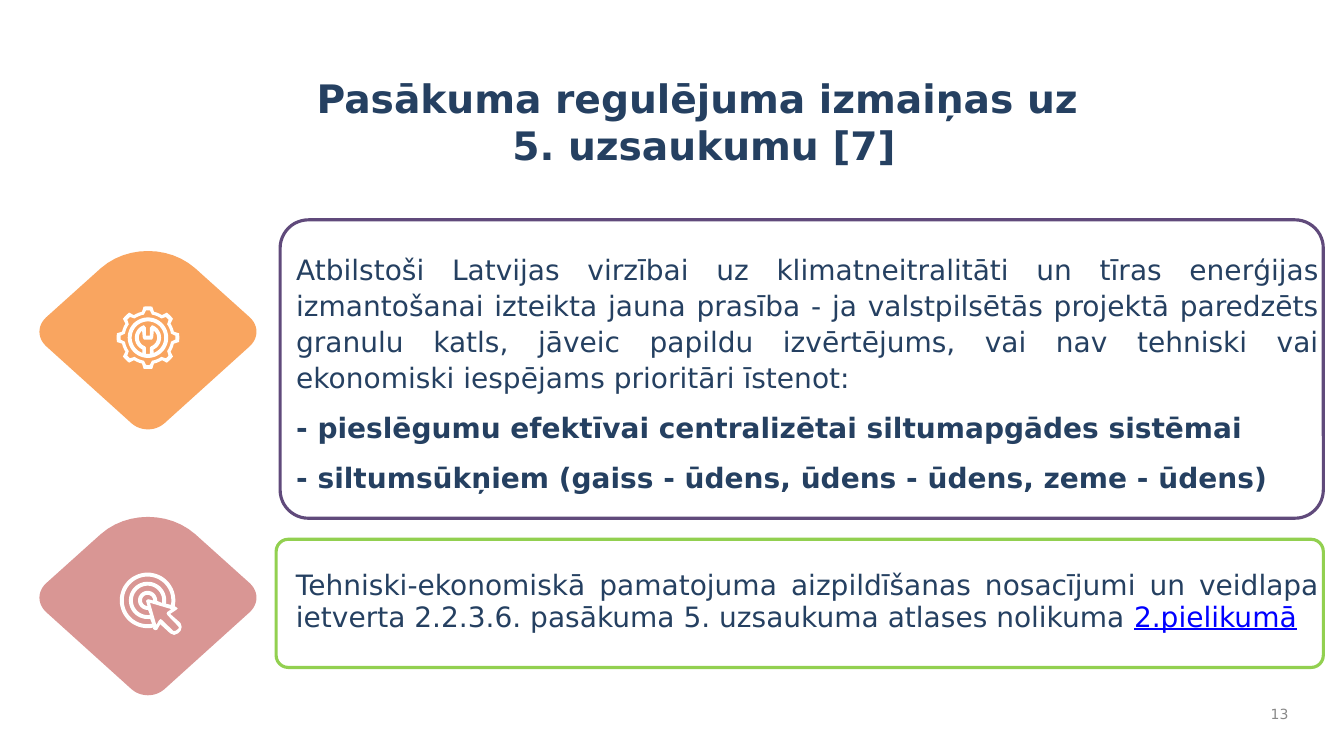
from math import cos, radians, sin

from lxml.etree import SubElement
from pptx import Presentation
from pptx.dml.color import RGBColor
from pptx.enum.shapes import MSO_SHAPE
from pptx.enum.text import MSO_ANCHOR, MSO_AUTO_SIZE, PP_ALIGN
from pptx.oxml.ns import qn
from pptx.util import Cm, Pt

COLORS = {
    "navy": "254061", "grey": "898989", "link": "0000FF", "white": "FFFFFF",
    "orange": "F9A560", "rose": "D99694", "purple": "604A7B", "green": "92D050",
}
FONT = "DejaVu Sans"


def write_text(box, text, size=20, color="navy", bold=False, underline=False,
               align=PP_ALIGN.JUSTIFY, line=1.0, before=0, after=0, para=None):
    """Add a paragraph to the box, or a span to the given paragraph."""
    if para is None:
        frame = box.text_frame
        frame.word_wrap = True
        frame.auto_size = MSO_AUTO_SIZE.NONE
        para = frame.paragraphs[0] if not frame.text else frame.add_paragraph()
        para.alignment = align
        para.line_spacing = line
        para.space_before, para.space_after = Pt(before), Pt(after)
    span = para.add_run()
    span.text = text
    span.font.name, span.font.size = FONT, Pt(size)
    span.font.bold, span.font.underline = bold, underline
    span.font.color.rgb = RGBColor.from_string(COLORS[color])
    return para


def draw_outline(center, contours, color):
    """Fill contours given in cm around a center.

    A piece is a point (x, y), an arc (radius, start, end) with degrees
    clockwise from the top, or a Bezier curve of eight coordinates.
    """
    builder = None
    for contour in contours:
        points = []
        for piece in contour:
            if len(piece) == 2:
                points.append(piece)
            elif len(piece) == 3:
                radius, start, end = piece
                steps = max(2, round(abs(end - start) / 6))
                for step in range(steps + 1):
                    angle = radians(start + (end - start) * step / steps)
                    points.append((radius * sin(angle), -radius * cos(angle)))
            else:
                for step in range(13):
                    t = step / 12
                    weights = ((1 - t) ** 3, 3 * t * (1 - t) ** 2, 3 * t * t * (1 - t), t ** 3)
                    points.append(tuple(sum(w * v for w, v in zip(weights, piece[axis::2]))
                                        for axis in (0, 1)))
        points = [(Cm(center[0] + x), Cm(center[1] + y)) for x, y in points]
        if builder is None:
            builder = page.shapes.build_freeform(*points[0], scale=1.0)
        else:
            builder.move_to(*points[0])
        builder.add_line_segments(points[1:], close=True)
    shape = builder.convert_to_shape()
    shape.shadow.inherit = False
    shape.fill.solid()
    shape.fill.fore_color.rgb = RGBColor.from_string(COLORS[color])
    shape.line.fill.background()


deck = Presentation()
deck.slide_width, deck.slide_height = Cm(33.87), Cm(19.05)
page = deck.slides.add_slide(deck.slide_layouts[1])

# Title
title = page.shapes.title
title.left, title.top, title.width, title.height = Cm(4.24), Cm(1.73), Cm(27), Cm(2.64)
for text in ("Pasākuma regulējuma izmaiņas uz ", "5. uzsaukumu [7]"):
    write_text(title, text, size=28, bold=True, align=PP_ALIGN.CENTER)

# Requirement text
body = page.placeholders[1]
body.left, body.top, body.width, body.height = Cm(7.21), Cm(6.17), Cm(26.29), Cm(6.48)
requirements = [
    "Atbilstoši Latvijas virzībai uz klimatneitralitāti un tīras enerģijas izmantošanai "
    "izteikta jauna prasība - ja valstpilsētās projektā paredzēts granulu katls, jāveic "
    "papildu izvērtējums, vai nav tehniski vai ekonomiski iespējams prioritāri īstenot:",
    "- pieslēgumu efektīvai centralizētai siltumapgādes sistēmai",
    "- siltumsūkņiem (gaiss - ūdens, ūdens - ūdens, zeme - ūdens)",
]
for number, text in enumerate(requirements):
    para = write_text(body, text, bold=number > 0, line=1.07,
                      before=4 if number else 0, after=6)
    properties = para._p.get_or_add_pPr()
    properties.set("marL", "0")
    properties.set("indent", "0")
    SubElement(properties, qn("a:buNone"))

# Annex text
annex = page.shapes.add_textbox(Cm(7.21), Cm(14.22), Cm(26.29), Cm(2.26))
para = write_text(annex, "Tehniski-ekonomiskā pamatojuma aizpildīšanas nosacījumi un veidlapa "
                  "ietverta 2.2.3.6. pasākuma 5. uzsaukuma atlases nolikuma ",
                  line=0.97, after=6)
write_text(annex, "2.pielikumā", color="link", underline=True, para=para)

# Rounded frames
for left, top, width, height, color in ((7.06, 5.54, 26.29, 7.52, "purple"),
                                        (6.96, 13.59, 26.39, 3.23, "green")):
    frame = page.shapes.add_shape(MSO_SHAPE.ROUNDED_RECTANGLE,
                                  Cm(left), Cm(top), Cm(width), Cm(height))
    frame.adjustments[0] = 0.095
    frame.shadow.inherit = False
    frame.fill.background()
    frame.line.color.rgb = RGBColor.from_string(COLORS[color])
    frame.line.width = Pt(2.25)

# Diamonds: four rounded corners joined by straight sides
diamond = [[
    (-0.41, 2.31, -0.18, 2.51, 0.18, 2.51, 0.41, 2.31),
    (2.57, 0.36, 2.79, 0.15, 2.79, -0.15, 2.57, -0.36),
    (1.19, -1.6, 0.53, -2.18, -0.53, -2.18, -1.19, -1.6),
    (-2.57, -0.36, -2.79, -0.15, -2.79, 0.15, -2.57, 0.36),
]]
for middle, color in ((8.36, "orange"), (15.06, "rose")):
    draw_outline((3.73, middle), diamond, color)

# Gear: outer and inner edge of eight teeth
gear = []
for tip, tip_angle, root, root_angle in ((0.79, 8, 0.67, 13), (0.69, 4, 0.59, 10)):
    edge = []
    for tooth in range(0, 360, 45):
        edge += [(tip, tooth - tip_angle, tooth + tip_angle),
                 (root, tooth + root_angle, tooth + 45 - root_angle)]
    gear.append(edge)
draw_outline((3.73, 8.51), gear, "white")

# Wrench in a ring
wrench = [
    [(0.51, 0, 360)],
    [(0.41, -160, 160), (0.33, 155, 18), (0.05, -0.25), (0.05, -0.05),
     (-0.05, -0.05), (-0.05, -0.25), (0.33, -18, -155)],
    [(0.23, 40, 160), (0.05, 0.25), (0.05, 0.41), (-0.05, 0.41), (-0.05, 0.25),
     (0.23, -160, -40), (-0.13, 0), (-0.1, 0.05), (0.1, 0.05), (0.13, 0)],
]
draw_outline((3.73, 8.51), wrench, "white")

# Target with a pointer
target = [
    [(0.7, 168, 462), (0.72, 0.17), (0.76, 0.2), (0.72, 0.24), (0.57, 0.34),
     (0.83, 0.57), (0.86, 0.67), (0.83, 0.77), (0.77, 0.83), (0.67, 0.87),
     (0.57, 0.83), (0.32, 0.6), (0.24, 0.74), (0.19, 0.75), (0.14, 0.72)],
    [(0.6, 169, 461), (0.47, 460, 172)],
    [(0.37, 170, 460), (0.24, 453, 177)],
    [(0.14, 180, 450), (0.01, -0.03), (-0.04, 0.01)],
    [(0.06, 0.06), (0.6, 0.22), (0.5, 0.29), (0.48, 0.33), (0.5, 0.37),
     (0.77, 0.65), (0.79, 0.69), (0.77, 0.72), (0.7, 0.77), (0.65, 0.77),
     (0.37, 0.5), (0.33, 0.47), (0.29, 0.5), (0.22, 0.62)],
]
draw_outline((3.72, 15.13), target, "white")

# Page number
page_number = page.shapes.add_textbox(Cm(31.6), Cm(17.58), Cm(1.12), Cm(0.84))
page_number.text_frame.vertical_anchor = MSO_ANCHOR.MIDDLE
write_text(page_number, "13", size=10, color="grey", align=PP_ALIGN.RIGHT)

deck.save("out.pptx")
